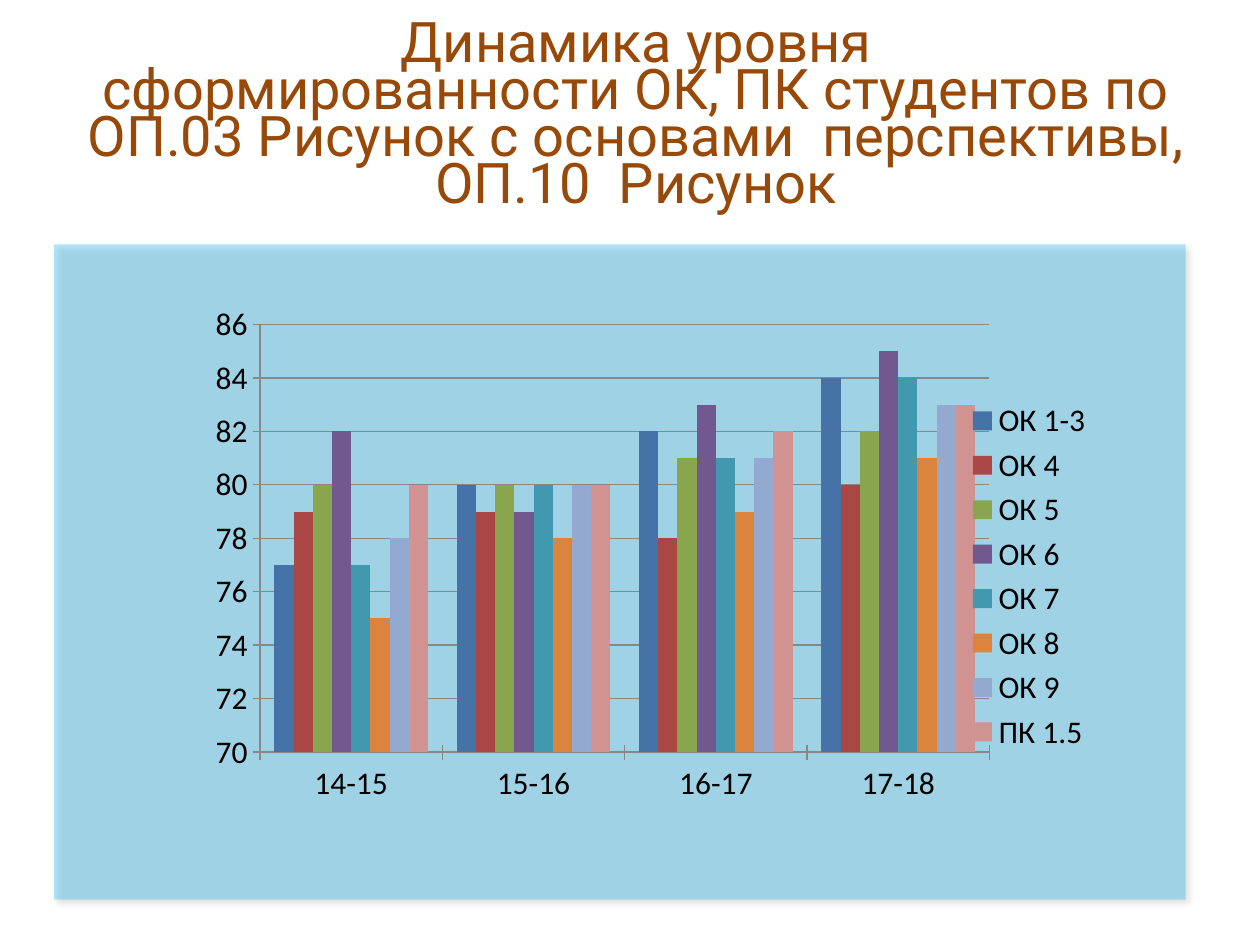
import pptx
import pptx.chart.data
import pptx.dml.color
import pptx.enum.chart
import pptx.enum.shapes
import pptx.enum.text
import pptx.oxml
import pptx.oxml.ns
import pptx.util
from dataclasses import dataclass

Inches = pptx.util.Inches
Pt = pptx.util.Pt
RGB = pptx.dml.color.RGBColor.from_string
NS = pptx.oxml.ns.nsdecls


@dataclass(frozen=True)
class Theme:
    title_font: str = "Roboto"
    chart_font: str = "Calibri"
    title_size: int = 32
    chart_size: int = 18
    title: str = "984807"
    panel: str = "00B0F0"
    text: str = "000000"
    axis: str = "878787"


theme = Theme()


def write_text(tf, text, *, font, size, color, align, line_spacing=1.0):
    p = tf.paragraphs[0]
    p.text = text
    p.alignment = align
    p.line_spacing = line_spacing
    for r in p.runs:
        r.font.name = font
        r.font.size = Pt(size)
        r.font.color.rgb = RGB(color)


prs = pptx.Presentation()
prs.slide_width, prs.slide_height = Inches(10), Inches(7.5)
s = prs.slides.add_slide(prs.slide_layouts[5])

# Title
title = s.shapes.title
title.left, title.top = Inches(0.55), Inches(0.31)
title.width, title.height = Inches(9), Inches(1.63)
tf = title.text_frame
tf.word_wrap = True
tf.auto_size = pptx.enum.text.MSO_AUTO_SIZE.NONE
tf.vertical_anchor = pptx.enum.text.MSO_ANCHOR.MIDDLE
tf.margin_bottom = Inches(0.42)
write_text(
    tf,
    "Динамика уровня\vсформированности ОК, ПК студентов по "
    "ОП.03 Рисунок с основами  перспективы, ОП.10  Рисунок",
    font=theme.title_font, size=theme.title_size, color=theme.title,
    align=pptx.enum.text.PP_ALIGN.CENTER, line_spacing=0.7,
)

# Translucent panel with a soft shadow
panel = s.shapes.add_shape(pptx.enum.shapes.MSO_SHAPE.RECTANGLE,
                           Inches(0.43), Inches(1.94), Inches(8.98), Inches(5.2))
panel.line.fill.background()
panel.fill.solid()
panel.fill.fore_color.rgb = RGB(theme.panel)
color = panel.fill._xPr.find(".//" + pptx.oxml.ns.qn("a:srgbClr"))
color.append(pptx.oxml.parse_xml(f'<a:alpha {NS("a")} val="29000"/>'))
panel.shadow.inherit = False
effects = panel._element.spPr.find(pptx.oxml.ns.qn("a:effectLst"))
effects.append(pptx.oxml.parse_xml(
    f'<a:outerShdw {NS("a")} blurRad="{Pt(4)}" dist="{Pt(3)}" dir="2700000" '
    'algn="tl" rotWithShape="0"><a:srgbClr val="000000"><a:alpha val="40000"/>'
    '</a:srgbClr></a:outerShdw>'))

# Chart
series = [
    ("ОК 1-3", (77, 80, 82, 84), "4572A7"),
    ("ОК 4", (79, 79, 78, 80), "AA4643"),
    ("ОК 5", (80, 80, 81, 82), "89A54E"),
    ("ОК 6", (82, 79, 83, 85), "71588F"),
    ("ОК 7", (77, 80, 81, 84), "4198AF"),
    ("ОК 8", (75, 78, 79, 81), "DB843D"),
    ("ОК 9", (78, 80, 81, 83), "93A9CF"),
    ("ПК 1.5", (80, 80, 82, 83), "D19392"),
]
data = pptx.chart.data.CategoryChartData()
data.categories = ["14-15", "15-16", "16-17", "17-18"]
for name, values, _ in series:
    data.add_series(name, values)
chart = s.shapes.add_chart(
    pptx.enum.chart.XL_CHART_TYPE.COLUMN_CLUSTERED,
    Inches(1.06), Inches(2.25), Inches(7.72), Inches(4.65), data).chart
chart.has_title = False
chart.font.name = theme.chart_font
chart.font.size = Pt(theme.chart_size)
chart.font.color.rgb = RGB(theme.text)

plot = chart.plots[0]
plot.vary_by_categories = False
plot.gap_width = 150
plot.overlap = 0
for ser, (_, _, fill) in zip(plot.series, series):
    ser.format.fill.solid()
    ser.format.fill.fore_color.rgb = RGB(fill)

values_axis = chart.value_axis
values_axis.minimum_scale, values_axis.maximum_scale = 70, 86
values_axis.major_unit = 2
values_axis.has_major_gridlines = True
for axis in (chart.category_axis, values_axis):
    axis.major_tick_mark = pptx.enum.chart.XL_TICK_MARK.CROSS
    axis.minor_tick_mark = pptx.enum.chart.XL_TICK_MARK.NONE
for line in (chart.category_axis.format.line, values_axis.format.line,
             values_axis.major_gridlines.format.line):
    line.color.rgb = RGB(theme.axis)
    line.width = Pt(0.75)

chart.has_legend = True
chart.legend.position = pptx.enum.chart.XL_LEGEND_POSITION.RIGHT
chart.legend.include_in_layout = False

# Fixed inner plot area, as fractions of the chart
area = chart._chartSpace.chart.plotArea
for old in area.findall(pptx.oxml.ns.qn("c:layout")):
    area.remove(old)
place = "".join(f'<c:{key} val="{value}"/>' for key, value in (
    ("layoutTarget", "inner"), ("xMode", "edge"), ("yMode", "edge"),
    ("x", 0.13), ("y", 0.07), ("w", 0.75), ("h", 0.73)))
area.insert(0, pptx.oxml.parse_xml(
    f'<c:layout {NS("c")}><c:manualLayout>{place}</c:manualLayout></c:layout>'))

prs.save("out.pptx")
